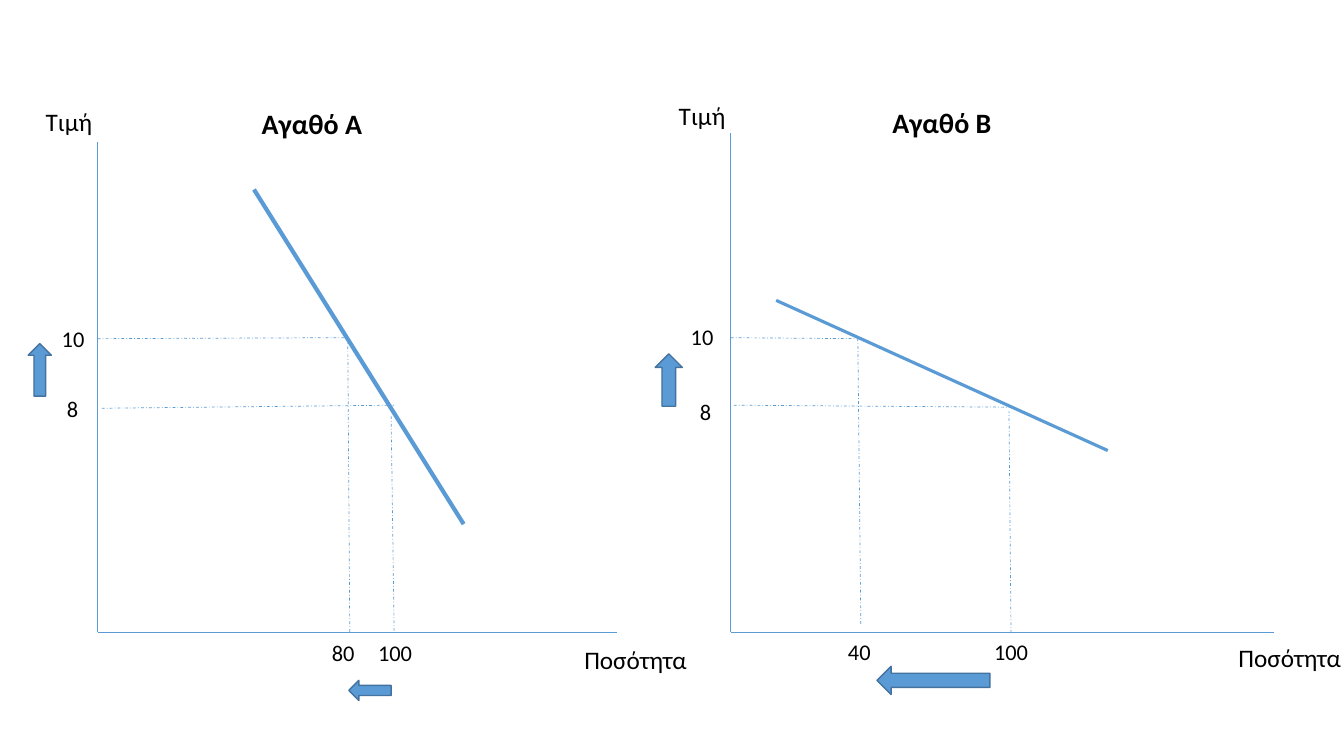
from dataclasses import dataclass

from lxml.etree import SubElement
from pptx import Presentation
from pptx.dml.color import RGBColor
from pptx.enum.dml import MSO_LINE_DASH_STYLE as Dash
from pptx.enum.shapes import MSO_CONNECTOR as Connector, MSO_SHAPE as Shape
from pptx.enum.text import MSO_AUTO_SIZE as AutoSize, PP_ALIGN as Align
from pptx.oxml.ns import qn
from pptx.util import Inches, Pt

BLUE = RGBColor(0x5B, 0x9B, 0xD5)
DARK_BLUE = RGBColor(0x43, 0x73, 0x9E)
BLACK = RGBColor(0x00, 0x00, 0x00)

# The grid has ten columns and ten rows to the inch.
COLUMNS, ROWS = 133.33, 75
BASELINE = 62.7


def grid(cells):
    return Inches(cells / 10)


@dataclass
class Level:
    """A price and the quantity demanded at it, with label anchors and guides."""
    price: str
    price_at: tuple
    price_guide: tuple
    quantity: str
    quantity_at: tuple
    quantity_guide: tuple


@dataclass
class Good:
    name: str
    name_at: tuple
    origin: float
    axis_top: float
    axis_end: float
    price_name_at: tuple
    quantity_name_at: tuple
    demand: tuple
    demand_weight: float
    levels: tuple
    price_rise: tuple
    quantity_fall: tuple


class DemandSlide:
    font = "Calibri"

    def __init__(self, slide):
        self.shapes = slide.shapes

    def line(self, start, end, weight=0.5, dash=None):
        line = self.shapes.add_connector(
            Connector.STRAIGHT, *map(grid, (*start, *end)))
        line.line.color.rgb = BLUE
        line.line.width = Pt(weight)
        if dash:
            line.line.dash_style = dash
        SubElement(line._element.spPr, qn("a:effectLst"))

    def label(self, text, anchor, width, height, size, bold=False):
        """Place a label by the middle of its top edge."""
        center, top = anchor
        box = self.shapes.add_textbox(
            *map(grid, (center - width / 2, top, width, height)))
        frame = box.text_frame
        frame.word_wrap = False
        frame.auto_size = AutoSize.SHAPE_TO_FIT_TEXT
        paragraph = frame.paragraphs[0]
        paragraph.text = text
        paragraph.alignment = Align.CENTER
        font = paragraph.font
        font.name, font.size, font.bold = self.font, Pt(size), bold
        font.color.rgb = BLACK

    def value(self, text, anchor):
        self.label(text, anchor, 2.1 + 1.1 * len(text), 3.7, 16)

    def arrow(self, direction, bounds):
        arrow = self.shapes.add_shape(direction, *map(grid, bounds))
        arrow.shadow.inherit = False
        arrow.fill.solid()
        arrow.fill.fore_color.rgb = BLUE
        arrow.line.color.rgb = DARK_BLUE
        arrow.line.width = Pt(1)

    def diagram(self, good):
        corner = (good.origin, BASELINE)
        self.line((good.origin, good.axis_top), corner)
        self.line((good.axis_end, BASELINE), corner)
        self.line(*good.demand, weight=good.demand_weight)
        for level in good.levels:
            for guide in (level.price_guide, level.quantity_guide):
                self.line(*guide, dash=Dash.DASH_DOT)
            self.value(level.price, level.price_at)
            self.value(level.quantity, level.quantity_at)
        self.label("Τιμή", good.price_name_at, 6.7, 4, 18)
        self.label("Ποσότητα", good.quantity_name_at, 12.3, 4, 18)
        self.label(good.name, good.name_at, 12, 4.4, 20, bold=True)
        self.arrow(Shape.UP_ARROW, good.price_rise)
        self.arrow(Shape.LEFT_ARROW, good.quantity_fall)


GOODS = (
    Good(
        name="Αγαθό Α", name_at=(30.95, 10.1),
        origin=9.7, axis_top=14.1, axis_end=61.2,
        price_name_at=(6.85, 10.1), quantity_name_at=(63.05, 63.4),
        demand=((25.2, 18.8), (46, 52)), demand_weight=3,
        levels=(
            Level("10", (7.25, 31.8), ((9.7, 33.6), (34.5, 33.5)),
                  "80", (34.05, 62.9), ((34.7, 62.7), (34.5, 33.5))),
            Level("8", (7.2, 38.7), ((10.1, 40.5), (39.1, 40.2)),
                  "100", (39.2, 62.9), ((39.1, 62.6), (38.8, 41.1))),
        ),
        price_rise=(2.8, 34.1, 2.3, 5.2), quantity_fall=(34.6, 67.5, 4.2, 2),
    ),
    Good(
        name="Αγαθό Β", name_at=(93.45, 10),
        origin=72.5, axis_top=13.2, axis_end=126.4,
        price_name_at=(69.65, 9.5), quantity_name_at=(127.95, 63.2),
        demand=((77, 29.8), (109.9, 44.7)), demand_weight=2.25,
        levels=(
            Level("10", (69.65, 31.6), ((72.5, 33.5), (85.2, 33.6)),
                  "40", (85.25, 62.8), ((85.4, 61.9), (85.1, 33.5))),
            Level("8", (70, 39), ((72.8, 40.2), (100.4, 40.4)),
                  "100", (100.3, 62.8), ((100.3, 62.8), (100.1, 40.8))),
        ),
        price_rise=(65, 35.1, 2.7, 5.2), quantity_fall=(87, 66.1, 11.2, 2.8),
    ),
)


def main():
    deck = Presentation()
    deck.slide_width, deck.slide_height = grid(COLUMNS), grid(ROWS)
    blank_layout = deck.slide_layouts[6]
    demand_slide = DemandSlide(deck.slides.add_slide(blank_layout))
    for good in GOODS:
        demand_slide.diagram(good)
    deck.save("out.pptx")


if __name__ == "__main__":
    main()
